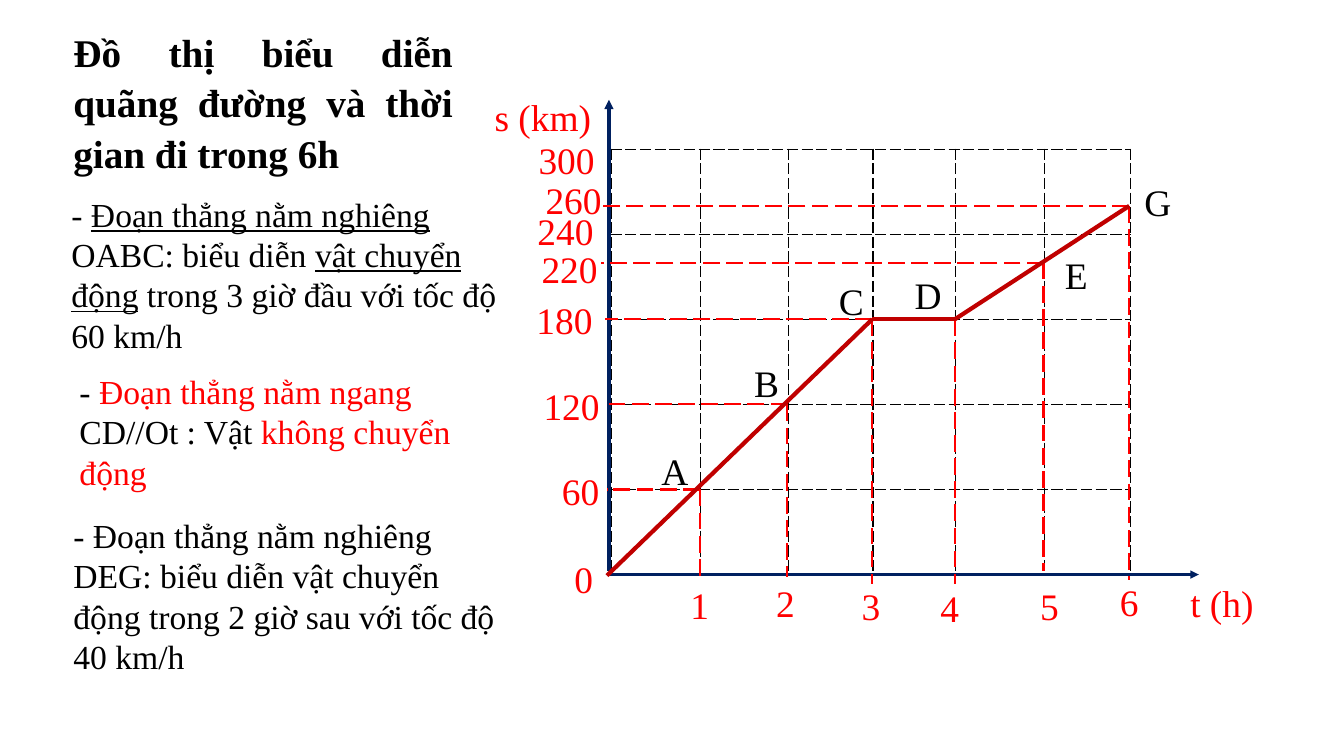
from itertools import accumulate

from lxml.etree import SubElement
from pptx import Presentation
from pptx.dml.color import RGBColor
from pptx.enum.dml import MSO_LINE
from pptx.enum.shapes import MSO_CONNECTOR
from pptx.enum.text import PP_ALIGN
from pptx.oxml.ns import qn
from pptx.util import Inches, Pt

COLORS = {"black": "000000", "red": "FF0000", "curve": "C00000",
          "axis": "002060", "white": "FFFFFF"}
FONT = "Times New Roman"
HOUR_WIDTHS = [0.89, 0.87, 0.84, 0.82, 0.88, 0.85]
GRID_STEP = 60  # km per grid row
GRID_ROWS = 5

# km: (label left from the plot's left edge, label top from the value's height)
DISTANCE_LABELS = {0: (-0.65, -0.32), 60: (-0.68, -0.35), 120: (-0.77, -0.35),
                   180: (-0.84, -0.36), 220: (-0.79, -0.3), 240: (-0.83, -0.4),
                   260: (-0.75, -0.42), 300: (-0.82, -0.26)}
# hour: (label centre from its grid line, label top from the time axis)
HOUR_LABELS = {1: (-0.01, -0.06), 2: (-0.03, -0.08), 3: (-0.02, -0.05),
               4: (-0.06, -0.03), 5: (0.05, -0.05), 6: (-0.01, -0.09)}
# name, hour, km, guide's left end, guide's drop below the axis, label offset
POINTS = [("A", 1, 60, -0.04, 0.01, (-0.48, -0.55)),
          ("B", 2, 120, -0.06, 0.02, (-0.44, -0.58)),
          ("C", 3, 180, -0.06, 0.09, (-0.44, -0.55)),
          ("D", 4, 180, 2.56, 0.09, (-0.5, -0.61)),
          ("E", 5, 220, -0.1, -0.04, (0.09, -0.24)),
          ("G", 6, 260, -0.1, 0.05, (0.05, -0.4))]


def color(name):
    return RGBColor.from_string(COLORS[name])


def add_text(slide, box, runs, size, wrap=True, align=None, spacing=None):
    """Place one paragraph; each run is (text, colour, bold, underline)."""
    frame = slide.shapes.add_textbox(*map(Inches, box)).text_frame
    frame.word_wrap = wrap
    paragraph = frame.paragraphs[0]
    paragraph.alignment = align
    paragraph.line_spacing = spacing
    for text, color_name, bold, underline in runs:
        run = paragraph.add_run()
        run.text = text
        run.font.name = FONT
        run.font.size = Pt(size)
        run.font.bold = bold
        run.font.underline = underline
        run.font.color.rgb = color(color_name)
    return paragraph


def add_label(slide, text, left, top, width, color_name="red"):
    add_text(slide, (left, top, width, 0.64), [(text, color_name, False, False)],
             26.7, wrap=False, align=PP_ALIGN.CENTER, spacing=1.2)


def add_line(slide, start, end, color_name, width, dashed=False, arrow=False):
    connector = slide.shapes.add_connector(
        MSO_CONNECTOR.STRAIGHT, *map(Inches, (*start, *end)))
    connector.line.color.rgb = color(color_name)
    connector.line.width = Pt(width)
    if dashed:
        connector.line.dash_style = MSO_LINE.LONG_DASH
    properties = connector._element.spPr
    if arrow:
        SubElement(properties.find(qn("a:ln")), qn("a:tailEnd"), type="triangle")
    SubElement(properties, qn("a:effectLst"))


def style_cell(cell):
    """White fill with thin dashed black borders."""
    properties = cell._tc.get_or_add_tcPr()
    for side in ("lnL", "lnR", "lnT", "lnB"):
        border = SubElement(properties, qn(f"a:{side}"), w=str(Pt(1)))
        fill = SubElement(border, qn("a:solidFill"))
        SubElement(fill, qn("a:srgbClr"), val=COLORS["black"])
        SubElement(border, qn("a:prstDash"), val="lgDash")
    cell.fill.solid()
    cell.fill.fore_color.rgb = color("white")


def add_grid(slide, box):
    table = slide.shapes.add_table(
        GRID_ROWS, len(HOUR_WIDTHS), *map(Inches, box)).table
    table.first_row = False
    table.horz_banding = False
    for column, width in zip(table.columns, HOUR_WIDTHS):
        column.width = Inches(width)
    for row in table.rows:
        row.height = Inches(box[3] / GRID_ROWS)
        for cell in row.cells:
            style_cell(cell)


def add_graph(slide, box):
    left, top, width, height = box
    bottom = top + height
    hour_x = [left + offset for offset in accumulate(HOUR_WIDTHS, initial=0)]

    def distance_y(km):
        return bottom - km / GRID_STEP * height / GRID_ROWS

    # Grid and axes
    add_grid(slide, box)
    add_line(slide, (left - 0.03, bottom), (left + 5.83, bottom), "axis", 2, arrow=True)
    add_line(slide, (left - 0.02, bottom - 0.04), (left - 0.02, top - 0.49),
             "axis", 2.25, arrow=True)
    add_label(slide, "s (km)", left - 1.26, top - 0.68, 1.17)
    add_label(slide, "t (h)", left + 5.47, bottom - 0.08, 1.18)

    # Axis values
    for km, (offset_x, offset_y) in DISTANCE_LABELS.items():
        add_label(slide, str(km), left + offset_x, distance_y(km) + offset_y, 0.76)
    for hour, (offset_x, offset_y) in HOUR_LABELS.items():
        add_label(slide, str(hour), hour_x[hour] + offset_x - 0.2, bottom + offset_y, 0.4)

    # Guides from each point to both axes, and point names
    corners = {"O": (left - 0.04, bottom + 0.01)}
    for name, hour, km, guide_left, drop, (offset_x, offset_y) in POINTS:
        x, y = hour_x[hour] - 0.01, distance_y(km)
        corners[name] = (x, y)
        add_line(slide, (x, y), (x, bottom + drop), "red", 1.5, dashed=True)
        add_line(slide, (x, y), (left + guide_left, y), "red", 1.5, dashed=True)
        add_label(slide, name, x + offset_x, y + offset_y, 0.47, "black")

    # Journey
    for start, end in ("OC", "CD", "DG"):
        add_line(slide, corners[start], corners[end], "curve", 3)


def add_explanation(slide, box):
    left, top, width, height = box

    # Title
    title = add_text(
        slide, (left + 0.02, top, 3.96, 1.59),
        [("Đồ thị biểu diễn quãng đường và thời gian đi trong 6h", "black", True, False)],
        28, align=PP_ALIGN.JUSTIFY, spacing=1.07)
    title.space_before = title.space_after = Pt(8)

    # Notes on the three parts of the journey
    notes = [
        ((0, 1.67, width, 1.72),
         [("- ", "black", False, False),
          ("Đoạn thẳng nằm nghiêng ", "black", False, True),
          ("OABC: biểu diễn ", "black", False, False),
          ("vật chuyển động", "black", False, True),
          (" trong 3 giờ đầu với tốc độ 60 km/h", "black", False, False)]),
        ((0.08, 3.43, 4.1, 1.31),
         [("- ", "black", False, False),
          ("Đoạn thẳng nằm ngang", "red", False, False),
          (" CD//Ot : Vật ", "black", False, False),
          ("không chuyển động", "red", False, False)]),
        ((0.02, 4.86, 4.44, 1.72),
         [("- Đoạn thẳng nằm nghiêng DEG: biểu diễn vật chuyển động "
           "trong 2 giờ sau với tốc độ 40 km/h", "black", False, False)]),
    ]
    for (offset_x, offset_y, note_width, note_height), runs in notes:
        add_text(slide, (left + offset_x, top + offset_y, note_width, note_height),
                 runs, 24)


def main():
    presentation = Presentation()
    presentation.slide_width = Inches(13.33)
    presentation.slide_height = Inches(7.5)
    slide = presentation.slides.add_slide(presentation.slide_layouts[6])
    add_graph(slide, (6.06, 1.48, sum(HOUR_WIDTHS), 4.22))
    add_explanation(slide, (0.61, 0.2, 4.56, 6.58))
    presentation.save("out.pptx")


if __name__ == "__main__":
    main()
